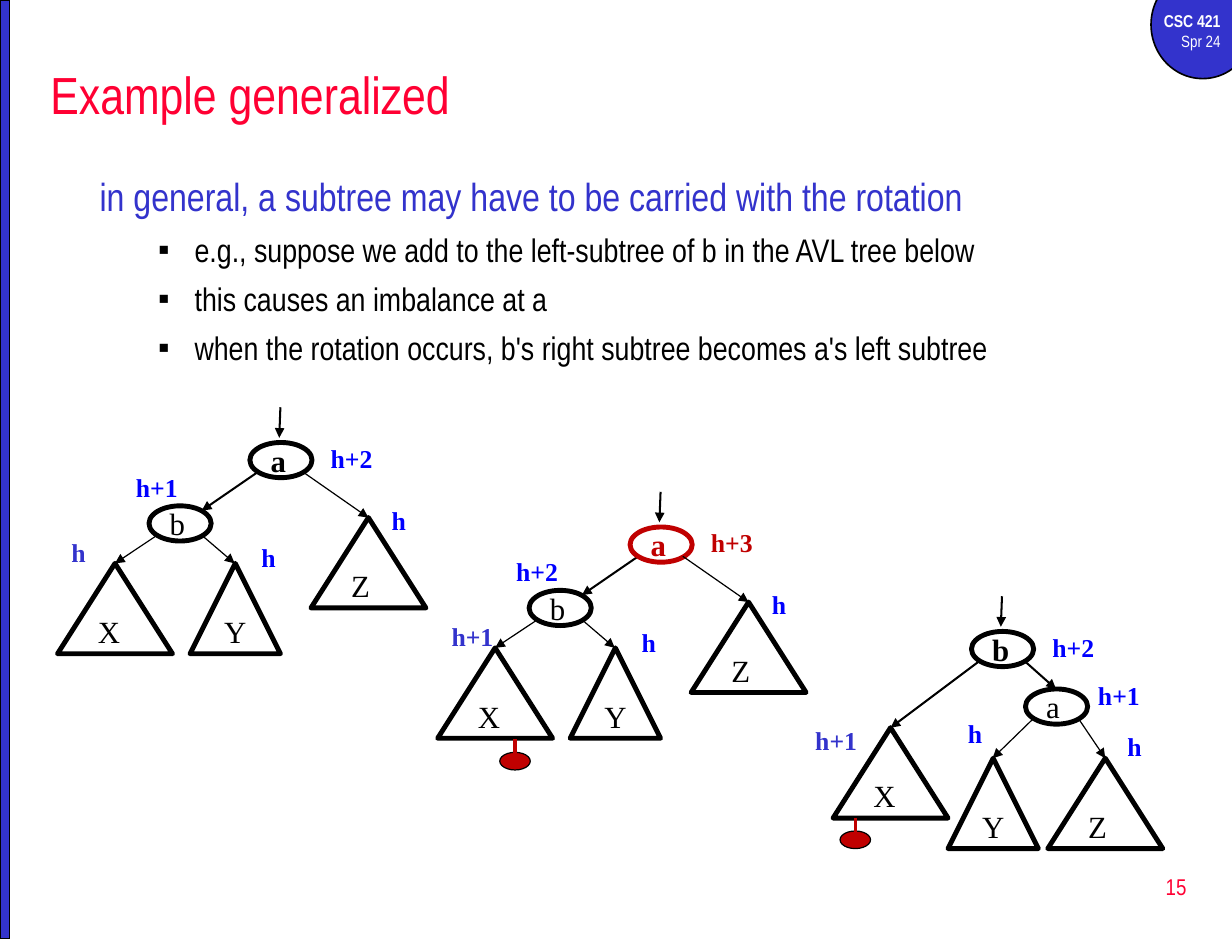
from dataclasses import dataclass

from lxml.etree import SubElement
from pptx import Presentation
from pptx.dml.color import RGBColor
from pptx.enum.shapes import MSO_CONNECTOR as Connector, MSO_SHAPE as Shape
from pptx.enum.text import MSO_ANCHOR as Anchor, PP_ALIGN as Align
from pptx.oxml.ns import qn
from pptx.util import Pt

EMU_PER_PX = 9144
NODE_WIDTH, NODE_HEIGHT = 53, 30
TREE_HEIGHT = 77
TREE_WIDTHS = {"X": 98, "Y": 77, "Z": 98}
LEFT_EXIT, RIGHT_EXIT = (7, 25), (45, 25)


@dataclass(frozen=True)
class Theme:
    sans: str = "Arial Narrow"
    serif: str = "Times New Roman"
    red: str = "FF0033"
    indigo: str = "3333CC"
    blue: str = "0000FF"
    crimson: str = "C00000"
    black: str = "000000"
    white: str = "FFFFFF"
    title: float = 32
    lead: float = 24
    bullet: float = 20
    node: float = 18.9
    label: float = 15.8
    number: float = 14
    course: float = 10.5
    term: float = 10


THEME = Theme()


def px(*lengths):
    return [length * EMU_PER_PX for length in lengths]


def shift(point, offset):
    return point[0] + offset[0], point[1] + offset[1]


def write(paragraph, text, font=THEME.sans, size=THEME.bullet, color=THEME.black,
          bold=False, align=Align.LEFT, before=0, spacing=None):
    paragraph.alignment = align
    paragraph.space_before = Pt(before)
    paragraph.line_spacing = spacing
    run = paragraph.add_run()
    run.text = text
    run.font.name = font
    run.font.size = Pt(size)
    run.font.bold = bold
    run.font.color.rgb = RGBColor.from_string(color)


def add_bullet(paragraph):
    properties = paragraph._p.get_or_add_pPr()
    properties.set("marL", str(81 * EMU_PER_PX))
    properties.set("indent", str(-31 * EMU_PER_PX))
    SubElement(properties, qn("a:buFont"), typeface="Arial")
    SubElement(properties, qn("a:buChar"), char="▪")


def add_text_box(shapes, box, wrap=True, anchor=Anchor.TOP):
    frame = shapes.add_textbox(*px(*box)).text_frame
    frame.word_wrap = wrap
    frame.vertical_anchor = anchor
    return frame


def add_outline(shapes, kind, box, fill=None, line=THEME.black, weight=3.0):
    shape = shapes.add_shape(kind, *px(*box))
    shape.shadow.inherit = False
    if fill:
        shape.fill.solid()
        shape.fill.fore_color.rgb = RGBColor.from_string(fill)
    else:
        shape.fill.background()
    shape.line.color.rgb = RGBColor.from_string(line)
    shape.line.width = Pt(weight)
    return shape


def add_line(shapes, start, end, weight=0.75, color=THEME.black, arrow=True):
    connector = shapes.add_connector(Connector.STRAIGHT, *px(*start, *end))
    connector.line.color.rgb = RGBColor.from_string(color)
    connector.line.width = Pt(weight)
    if arrow:
        SubElement(connector.line._get_or_add_ln(), qn("a:tailEnd"), type="triangle")
    SubElement(connector._element.spPr, qn("a:effectLst"))


def name_shape(shape, text, color=THEME.black, bold=False):
    frame = shape.text_frame
    frame.word_wrap = False
    frame.vertical_anchor = Anchor.MIDDLE
    write(frame.paragraphs[0], text, font=THEME.serif, size=THEME.node,
          color=color, bold=bold)


def add_node(shapes, text, corner, color=THEME.black, bold=False):
    node = add_outline(shapes, Shape.OVAL, (*corner, NODE_WIDTH, NODE_HEIGHT), line=color)
    name_shape(node, text, color, bold)


def add_subtree(shapes, text, corner):
    box = (*corner, TREE_WIDTHS[text], TREE_HEIGHT)
    name_shape(add_outline(shapes, Shape.ISOSCELES_TRIANGLE, box), text)


def add_height(shapes, text, corner, color=THEME.blue):
    width = 32 if len(text) == 1 else 56
    frame = add_text_box(shapes, (*corner, width, 37), wrap=False)
    write(frame.paragraphs[0], text, font=THEME.serif, size=THEME.label,
          color=color, bold=True)


def add_insertion(shapes, x, subtree_top):
    bottom = subtree_top + TREE_HEIGHT
    add_outline(shapes, Shape.OVAL, (x - 13, bottom + 11, 26, 15),
                fill=THEME.crimson, weight=0.75)
    add_line(shapes, (x, bottom), (x, bottom + 13), 2, THEME.crimson, arrow=False)


def add_root(shapes, text, corner, color=THEME.black):
    add_line(shapes, shift(corner, (26, -30)), shift(corner, (25, -4)), 1.25)
    add_node(shapes, text, corner, color, bold=True)


def add_branch(shapes, parent, exit_point, text, corner, weight=0.75):
    apex = shift(corner, (TREE_WIDTHS[text] // 2, 0))
    add_line(shapes, shift(parent, exit_point), apex, weight)
    add_subtree(shapes, text, corner)


def add_left_heavy_tree(slide, root, heights, root_color=THEME.black,
                        root_label_color=THEME.blue):
    shapes = slide.shapes.add_group_shape().shapes
    inner = shift(root, (-86, 54))
    add_line(shapes, shift(root, LEFT_EXIT), shift(inner, (45, 4)), 1.25)
    add_root(shapes, "a", root, root_color)
    add_branch(shapes, root, RIGHT_EXIT, "Z", shift(root, (52, 64)))
    add_node(shapes, "b", inner)
    add_branch(shapes, inner, RIGHT_EXIT, "Y", shift(root, (-51, 103)))
    add_branch(shapes, inner, LEFT_EXIT, "X", shift(root, (-164, 103)))
    offsets = [(59, -5), (-107, 20), (-162, 75), (0, 80), (111, 48)]
    colors = [root_label_color, THEME.blue, THEME.indigo, THEME.blue, THEME.blue]
    for text, offset, color in zip(heights, offsets, colors):
        add_height(shapes, text, shift(root, offset), color)
    return shapes


def add_rotated_tree(slide, root):
    shapes = slide.shapes.add_group_shape().shapes
    inner = shift(root, (46, 49))
    add_line(shapes, shift(root, RIGHT_EXIT), shift(inner, (26, 0)), 1.25)
    add_root(shapes, "b", root)
    add_branch(shapes, root, LEFT_EXIT, "X", shift(root, (-118, 82)), weight=1.25)
    add_node(shapes, "a", inner)
    add_branch(shapes, inner, LEFT_EXIT, "Y", shift(root, (-20, 108)))
    add_branch(shapes, inner, RIGHT_EXIT, "Z", shift(root, (65, 108)))
    add_height(shapes, "h+2", shift(root, (59, -5)))
    add_height(shapes, "h+1", shift(root, (98, 36)))
    add_height(shapes, "h+1", shift(root, (-143, 75)), THEME.indigo)
    add_height(shapes, "h", shift(root, (-13, 69)))
    add_height(shapes, "h", shift(root, (123, 80)))
    add_insertion(shapes, 729, root[1] + 82)


def add_frame(slide):
    add_outline(slide.shapes, Shape.OVAL, (981, -25, 88, 92), THEME.indigo, weight=1)
    course = add_text_box(slide.shapes, (967, 4, 83, 46))
    write(course.paragraphs[0], "CSC 421", size=THEME.course, color=THEME.white,
          bold=True, align=Align.RIGHT)
    write(course.add_paragraph(), "Spr 24", size=THEME.term, color=THEME.white,
          align=Align.RIGHT)
    add_outline(slide.shapes, Shape.RECTANGLE, (0, 0, 8, 800), THEME.indigo, weight=1)
    number = add_text_box(slide.shapes, (802, 729, 219, 53), anchor=Anchor.MIDDLE)
    write(number.paragraphs[0], "15", size=THEME.number, color=THEME.red,
          align=Align.RIGHT)


def add_title(slide, text):
    title = slide.shapes.title
    title.left, title.top, title.width, title.height = px(33, 42, 992, 75)
    title.text_frame.vertical_anchor = Anchor.MIDDLE
    write(title.text_frame.paragraphs[0], text, size=THEME.title, color=THEME.red)


def add_body(slide, lead, bullets):
    frame = add_text_box(slide.shapes, (75, 142, 952, 150))
    write(frame.paragraphs[0], lead, size=THEME.lead, color=THEME.indigo)
    for text in bullets:
        paragraph = frame.add_paragraph()
        write(paragraph, text, before=11, spacing=0.8)
        add_bullet(paragraph)


def main():
    presentation = Presentation()
    presentation.slide_width, presentation.slide_height = px(1050, 800)
    slide = presentation.slides.add_slide(presentation.slide_layouts[5])
    add_frame(slide)
    add_title(slide, "Example generalized")
    add_body(slide, "in general, a subtree may have to be carried with the rotation", [
        "e.g., suppose we add to the left-subtree of b in the AVL tree below",
        "this causes an imbalance at a",
        "when the rotation occurs, b's right subtree becomes a's left subtree",
    ])
    add_left_heavy_tree(slide, (213, 377), ["h+2", "h+1", "h", "h", "h"])
    unbalanced = add_left_heavy_tree(slide, (537, 449), ["h+3", "h+2", "h+1", "h", "h"],
                                     THEME.crimson, THEME.crimson)
    add_insertion(unbalanced, 439, 553)
    add_rotated_tree(slide, (828, 538))
    presentation.save("out.pptx")


if __name__ == "__main__":
    main()
